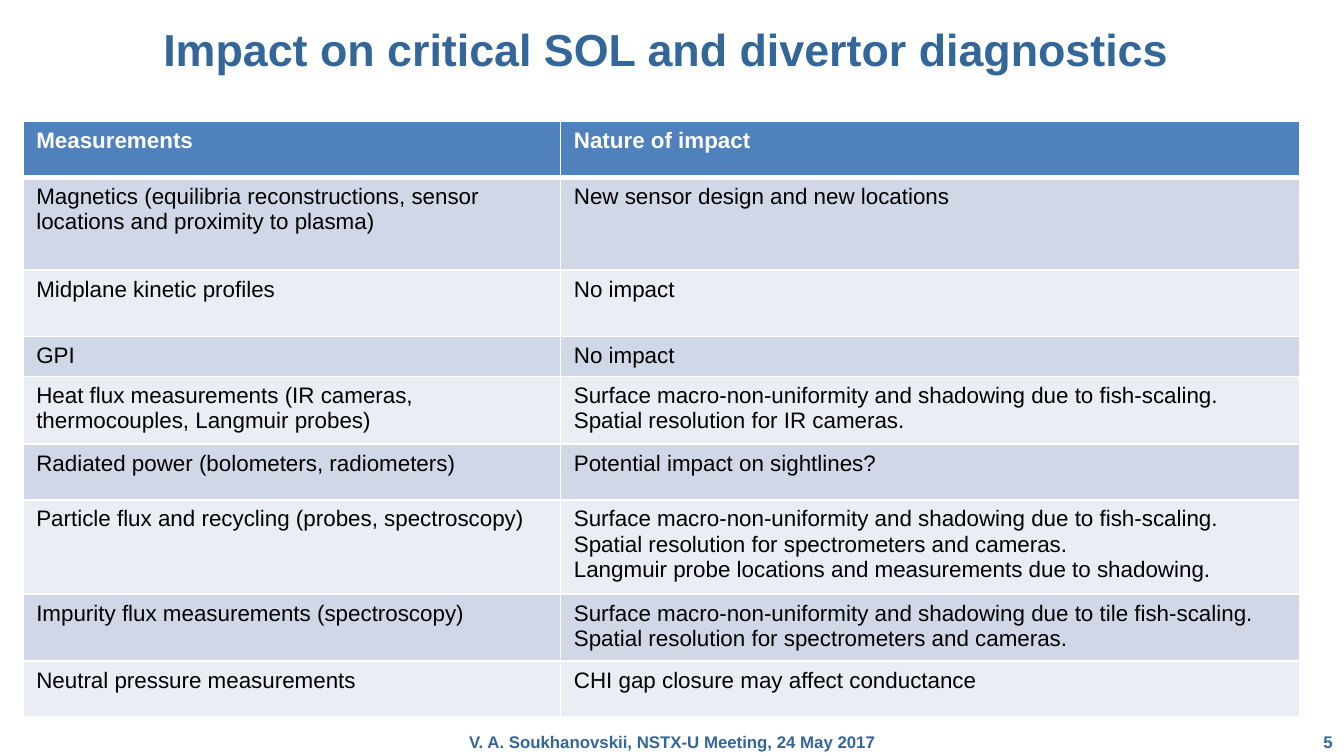
from dataclasses import dataclass

from lxml import etree
from pptx import Presentation
from pptx import util as u
from pptx.dml.color import RGBColor
from pptx.enum import text
from pptx.oxml import ns

Pt = u.Pt


@dataclass(frozen=True)
class Theme:
    font: str = "Arial"
    accent: str = "336699"
    header: str = "4F81BD"
    bands: tuple = ("D0D8E8", "E9EDF4")
    light: str = "FFFFFF"
    dark: str = "000000"
    title_size: int = 24
    table_size: int = 12
    footer_size: int = 9


class SlideBuilder:
    def __init__(self, slide, theme):
        self.slide = slide
        self.theme = theme

    def format_paragraph(self, paragraph, size, color, bold):
        formats = {"name": self.theme.font, "size": Pt(size), "bold": bold}
        for name, value in formats.items():
            setattr(paragraph.font, name, value)
        paragraph.font.color.rgb = RGBColor.from_string(color)

    def text_box(self, box, words, size, align, insets, anchor=text.MSO_ANCHOR.TOP, spacing=1.0):
        """Add bold accent text; insets are (horizontal, vertical)."""
        frame = self.slide.shapes.add_textbox(*map(Pt, box)).text_frame
        horizontal, vertical = map(Pt, insets)
        formats = {
            "word_wrap": True, "vertical_anchor": anchor,
            "margin_left": horizontal, "margin_right": horizontal,
            "margin_top": vertical, "margin_bottom": vertical,
        }
        for name, value in formats.items():
            setattr(frame, name, value)
        paragraph = frame.paragraphs[0]
        paragraph.text = words
        paragraph.alignment = align
        paragraph.line_spacing = spacing
        self.format_paragraph(paragraph, size, self.theme.accent, True)

    def cell_borders(self, cell, widths):
        properties = cell._tc.get_or_add_tcPr()
        for side, width in widths.items():
            line = etree.SubElement(properties, ns.qn(f"a:ln{side}"), w=str(Pt(width)))
            fill = etree.SubElement(line, ns.qn("a:solidFill"))
            etree.SubElement(fill, ns.qn("a:srgbClr"), val=self.theme.light)

    def table(self, left, top, widths, heights, rows):
        """Add a table with a header row and alternating body bands."""
        theme = self.theme
        box = (left, top, sum(widths), sum(heights))
        table = self.slide.shapes.add_table(len(rows), len(widths), *map(Pt, box)).table
        table.first_row = table.horz_banding = False
        for column, width in zip(table.columns, widths):
            column.width = Pt(width)
        for index, (row, height, words) in enumerate(zip(table.rows, heights, rows)):
            row.height = Pt(height)
            is_header = index == 0
            fill = theme.header if is_header else theme.bands[(index - 1) % 2]
            color = theme.light if is_header else theme.dark
            borders = {"L": 1, "R": 1, "T": 3 if index == 1 else 1, "B": 3 if is_header else 1}
            for cell, content in zip(row.cells, words):
                self.cell_borders(cell, borders)
                cell.fill.solid()
                cell.fill.fore_color.rgb = RGBColor.from_string(fill)
                cell.text_frame.text = content
                for paragraph in cell.text_frame.paragraphs:
                    self.format_paragraph(paragraph, theme.table_size, color, is_header)


SHADOWING = "Surface macro-non-uniformity and shadowing due to fish-scaling."
TILE_SHADOWING = "Surface macro-non-uniformity and shadowing due to tile fish-scaling."
RESOLUTION = "Spatial resolution for spectrometers and cameras."

DIAGNOSTICS = [
    ("Measurements", "Nature of impact"),
    ("Magnetics (equilibria reconstructions, sensor locations and proximity to plasma)",
     "New sensor design and new locations"),
    ("Midplane kinetic profiles", "No impact"),
    ("GPI", "No impact"),
    ("Heat flux measurements (IR cameras, thermocouples, Langmuir probes)",
     f"{SHADOWING} Spatial resolution for IR cameras."),
    ("Radiated power (bolometers, radiometers)", "Potential impact on sightlines?"),
    ("Particle flux and recycling (probes, spectroscopy)",
     f"{SHADOWING} {RESOLUTION}\nLangmuir probe locations and measurements due to shadowing."),
    ("Impurity flux measurements (spectroscopy)", f"{TILE_SHADOWING} {RESOLUTION}"),
    ("Neutral pressure measurements", "CHI gap closure may affect conductance"),
]
SHORT, SINGLE, DOUBLE, TRIPLE = 21.6, 30, 35.5, 49.7
ROW_HEIGHTS = [SINGLE, TRIPLE, DOUBLE, SHORT, DOUBLE, SINGLE, TRIPLE, DOUBLE, SINGLE]


def main():
    presentation = Presentation()
    presentation.slide_width, presentation.slide_height = Pt(720), Pt(405)
    theme = Theme()
    builder = SlideBuilder(presentation.slides.add_slide(presentation.slide_layouts[6]), theme)
    align = text.PP_ALIGN

    footers = [
        ((666, 389, 48, 16.5), "5", align.RIGHT),
        ((72, 389, 576, 16.5), "V. A. Soukhanovskii, NSTX-U Meeting, 24 May 2017", align.CENTER),
    ]
    for box, words, alignment in footers:
        builder.text_box(box, words, theme.footer_size, alignment, (0, 2.9))
    builder.text_box((0, 0, 720, 57), "Impact on critical SOL and divertor diagnostics ",
                     theme.title_size, align.CENTER, (3.6, 3.6),
                     anchor=text.MSO_ANCHOR.MIDDLE, spacing=0.85)
    builder.table(12.25, 65, (288, 396), ROW_HEIGHTS, DIAGNOSTICS)

    presentation.save("out.pptx")


if __name__ == "__main__":
    main()
